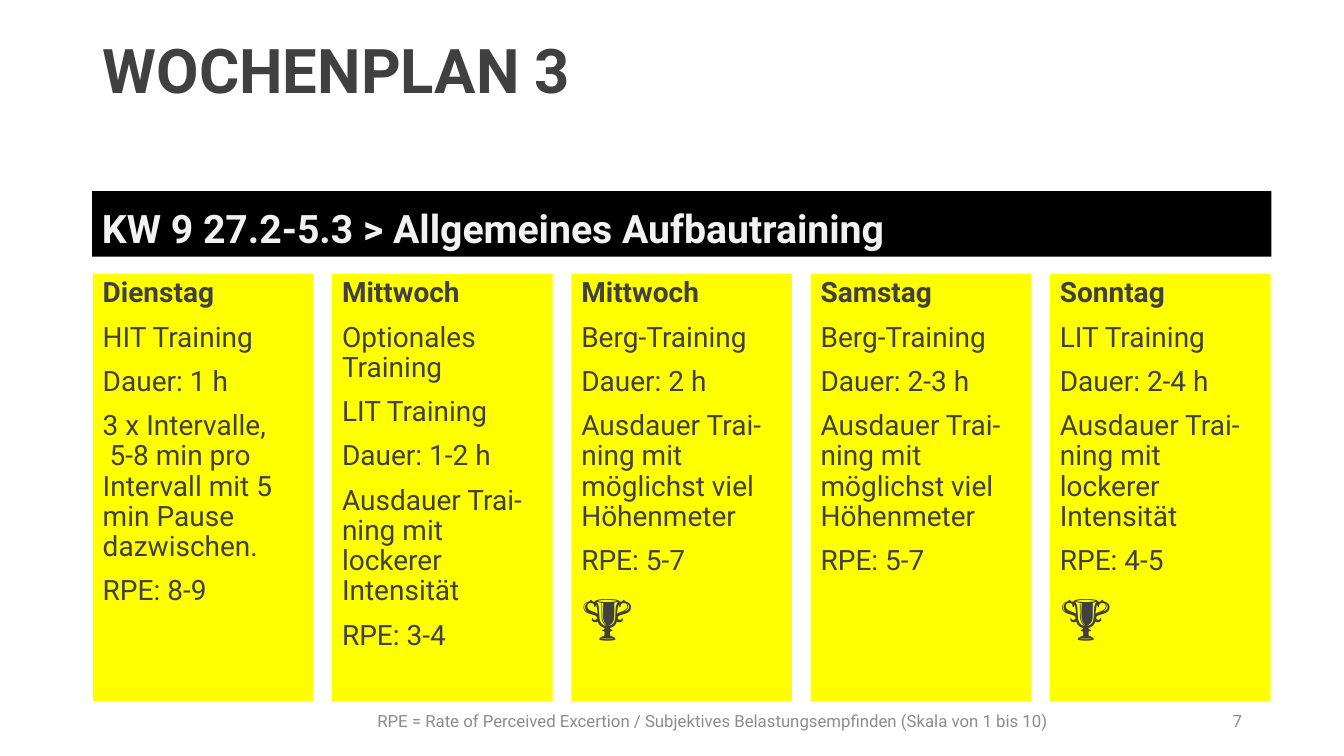
from pptx import Presentation
from pptx.dml.color import RGBColor
from pptx.enum.shapes import MSO_SHAPE as Shape
from pptx.enum.text import MSO_ANCHOR as Anchor, PP_ALIGN as Align
from pptx.util import Cm, Pt

DARK, GREY = "404040", "8C8C8C"


def color(hex_value):
    return RGBColor.from_string(hex_value)


def write(box, text, size=20, ink=DARK, bold=False, align=Align.LEFT,
          anchor=Anchor.MIDDLE, spacing=0.9, first=True):
    frame = box.text_frame
    frame.word_wrap = True
    frame.vertical_anchor = anchor
    line = frame.paragraphs[0] if first else frame.add_paragraph()
    line.text = text
    line.alignment = align
    line.line_spacing = spacing
    line.space_before = Pt(0 if first else 10)
    for run in line.runs:
        run.font.name = "Roboto"
        run.font.size = Pt(size)
        run.font.bold = bold
        run.font.color.rgb = color(ink)


prs = Presentation()
prs.slide_width, prs.slide_height = Cm(33.87), Cm(19.05)
slide = prs.slides.add_slide(prs.slide_layouts[6])
shapes = slide.shapes

# Title
title = shapes.add_textbox(Cm(2.34), Cm(0.23), Cm(25.45), Cm(3.23))
write(title, "WOCHENPLAN 3", size=44, bold=True)

# Week banner
week = shapes.add_shape(Shape.RECTANGLE, Cm(2.32), Cm(4.82), Cm(29.72), Cm(1.65))
week.shadow.inherit = False
week.fill.solid()
week.fill.fore_color.rgb = color("000000")
week.line.fill.background()
write(week, "KW 9 27.2-5.3 > Allgemeines Aufbautraining", size=28, ink="F2F2F2",
      bold=True, anchor=Anchor.BOTTOM)

# Footer and page number
footer = shapes.add_textbox(Cm(4.39), Cm(17.65), Cm(27.15), Cm(1.04))
write(footer, "RPE = Rate of Perceived Excertion / Subjektives Belastungsempfinden "
      "(Skala von 1 bis 10)", size=12, ink=GREY, align=Align.CENTER, spacing=1.0)
page_number = shapes.add_textbox(Cm(23.93), Cm(17.65), Cm(7.62), Cm(1.02))
write(page_number, "7", size=12, ink=GREY, align=Align.RIGHT, spacing=1.0)

# Training days, one column each
EASY = "Ausdauer Trai-ning mit lockerer Intensität"
CLIMB = "Ausdauer Trai-ning mit möglichst viel Höhenmeter"
TROPHY = "🏆"
days = [
    ["Dienstag", "HIT Training", "Dauer: 1 h",
     "3 x Intervalle,\v 5-8 min pro Intervall mit 5 min Pause dazwischen.", "RPE: 8-9"],
    ["Mittwoch", "Optionales Training", "LIT Training", "Dauer: 1-2 h", EASY, "RPE: 3-4"],
    ["Mittwoch", "Berg-Training", "Dauer: 2 h", CLIMB, "RPE: 5-7", TROPHY],
    ["Samstag", "Berg-Training", "Dauer: 2-3 h", CLIMB, "RPE: 5-7"],
    ["Sonntag", "LIT Training", "Dauer: 2-4 h", EASY, "RPE: 4-5", TROPHY],
]
for column, entries in enumerate(days):
    day = shapes.add_shape(Shape.RECTANGLE, Cm(2.34 + 6.03 * column), Cm(6.9),
                           Cm(5.56), Cm(10.76))
    day.shadow.inherit = False
    day.fill.solid()
    day.fill.fore_color.rgb = color("FFFF00")
    day.line.fill.background()
    for row, entry in enumerate(entries):
        write(day, entry, size=40 if entry == TROPHY else 20, bold=row == 0,
              anchor=Anchor.TOP, first=row == 0)

prs.save("out.pptx")
